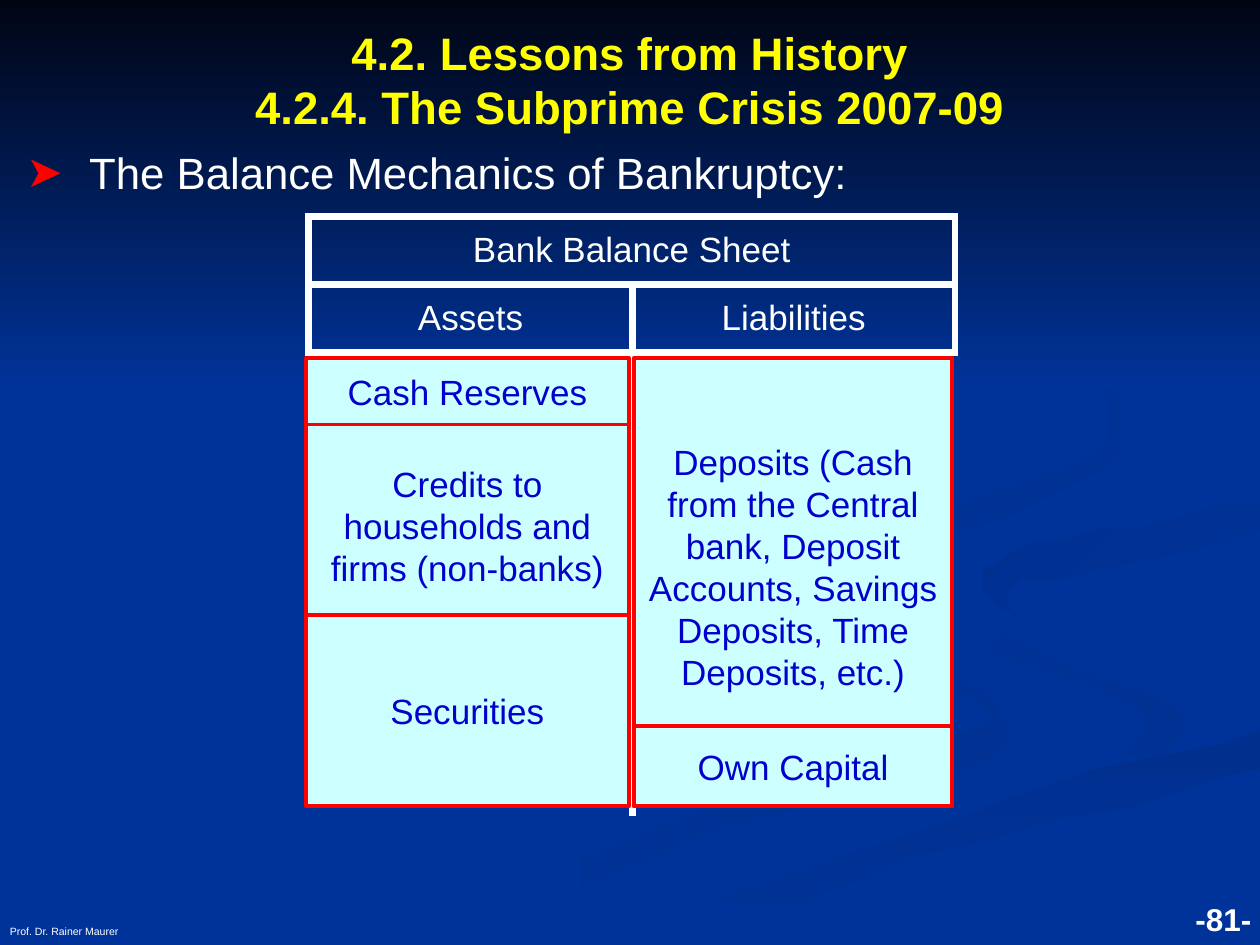
from dataclasses import dataclass

from lxml.etree import SubElement
from pptx import Presentation
from pptx.dml.color import RGBColor
from pptx.enum.shapes import MSO_SHAPE as Preset
from pptx.enum.text import MSO_ANCHOR as Anchor, PP_ALIGN as Align
from pptx.oxml.ns import qn
from pptx.util import Inches, Pt

WHITE = RGBColor(0xFF, 0xFF, 0xFF)
YELLOW = RGBColor(0xFF, 0xFF, 0x00)
RED = RGBColor(0xFF, 0x00, 0x00)
INK = RGBColor(0x00, 0x00, 0xCC)
PALE_CYAN = RGBColor(0xCC, 0xFF, 0xFF)
BLUE = RGBColor(0x00, 0x33, 0x99)
NIGHT = RGBColor(0x00, 0x05, 0x14)
SHADE = RGBColor(0x00, 0x2F, 0x8E)
SHADE_LIGHT = RGBColor(0x00, 0x31, 0x93)
FONT = "Arial"

# The slide is a grid of 100 columns by 75 rows
SLIDE_W, SLIDE_H = Inches(10), Inches(7.5)
UNIT = SLIDE_W // 100
CURVE_STEPS = 5


@dataclass
class Box:
    left: float
    top: float
    width: float
    height: float

    def emu(self) -> list[int]:
        return [round(v * UNIT) for v in (self.left, self.top, self.width, self.height)]


@dataclass
class Swirl:
    start: RGBColor
    end: RGBColor
    angle: int  # clockwise
    knots: list[tuple[float, float]]


@dataclass
class Label:
    text: str
    box: Box
    size: float
    color: RGBColor
    align: Align
    anchor: Anchor
    bold: bool = False


@dataclass
class Entry:
    text: str
    box: Box


# Background swirls, each a smooth closed curve through a few knots
SWIRLS = [
    Swirl(BLUE, SHADE_LIGHT, 0, [
        (57.5, 46), (63, 50.5), (76, 54.7), (77, 58.4), (54, 64.9), (30, 74.9),
        (36, 74.9), (56, 66.5), (77, 60.8), (78, 55.3), (61, 49.6)]),
    Swirl(BLUE, SHADE_LIGHT, 45, [
        (72.4, 46.4), (76.6, 51.2), (90, 55.7), (89.4, 60.5), (94.3, 57), (83, 51.9)]),
    Swirl(SHADE, BLUE, 90, [
        (50.3, 74.9), (57, 74.9), (72, 68.2), (99.8, 60.9), (99.8, 58.1), (76, 64.7)]),
    Swirl(SHADE, BLUE, 45, [
        (78, 46), (82.6, 49.6), (81, 46.5), (99.8, 42), (99.8, 40.2), (84, 42.8)]),
    Swirl(SHADE, BLUE, 45, [
        (68, 43), (82, 40.3), (89.4, 34.4), (85, 28), (76.2, 23.3), (86, 29),
        (87, 36.4), (73, 40.4), (59, 44), (62.2, 50), (60, 45.6)]),
]
SKY = Box(0, 0, 100, 30.8)

LABELS = [
    Label("4.2. Lessons from History\v4.2.4. The Subprime Crisis 2007-09",
          Box(0, 0.3, 100, 12), 26, YELLOW, Align.CENTER, Anchor.MIDDLE, True),
    Label("-81-", Box(77, 69.7, 23.3, 5.2), 18, WHITE, Align.RIGHT, Anchor.BOTTOM, True),
    Label("Prof. Dr. Rainer Maurer", Box(-0.2, 69.7, 61.8, 5.2), 6, WHITE,
          Align.LEFT, Anchor.BOTTOM),
]
TOPIC = Label("The Balance Mechanics of Bankruptcy:", Box(1.1, 10.7, 96.9, 6.6), 25, WHITE,
              Align.LEFT, Anchor.TOP)

# Balance sheet entries, back to front
ENTRIES = [
    Entry("Deposits (Cash from the Central bank, Deposit Accounts, Savings Deposits, "
          "Time Deposits, etc.)", Box(50.3, 28.4, 25.3, 33.1)),
    Entry("Credits to households and firms (non-banks)", Box(24.3, 33.5, 25.6, 16.4)),
    Entry("Securities", Box(24.3, 48.8, 25.6, 15.2)),
    Entry("Own Capital", Box(50.3, 57.6, 25.3, 6.4)),
    Entry("Cash Reserves", Box(24.3, 28.4, 25.6, 5.3)),
]
SHEET = Box(24.5, 17.2, 51.3, 47.6)
SHEET_COLS, SHEET_ROWS = (25.7, 25.6), (5.4, 5.4, 36.8)
HEADINGS = {(0, 0): "Bank Balance Sheet", (1, 0): "Assets", (1, 1): "Liabilities"}


def write(frame, text: str, size: float, color: RGBColor, align: Align, bold: bool = False):
    frame.word_wrap = True
    line = frame.paragraphs[0]
    line.text, line.alignment = text, align
    font = line.font
    font.name, font.size, font.bold, font.color.rgb = FONT, Pt(size), bold, color
    return line


def smooth(knots: list[tuple[float, float]]) -> list[tuple[float, float]]:
    """Closed Catmull-Rom curve, kept on the slide."""
    points = []
    for i, b in enumerate(knots):
        a, c, d = knots[i - 1], knots[(i + 1) % len(knots)], knots[(i + 2) % len(knots)]
        for step in range(CURVE_STEPS):
            t = step / CURVE_STEPS
            x, y = (q + t / 2 * (r - p + t * (2 * p - 5 * q + 4 * r - s
                                              + t * (3 * (q - r) + s - p)))
                    for p, q, r, s in zip(a, b, c, d))
            points.append((min(x, 100), min(y, 75)))
    return points


def shade(shape, start: RGBColor, end: RGBColor, angle: int) -> None:
    shape.shadow.inherit = False
    shape.line.fill.background()
    shape.fill.gradient()
    shape.fill.gradient_angle = (360 - angle) % 360
    for stop, color, place in zip(shape.fill.gradient_stops, (start, end), (0, 1)):
        stop.color.rgb, stop.position = color, place


def draw_swirl(shapes, swirl: Swirl) -> None:
    first, *rest = smooth(swirl.knots)
    builder = shapes.build_freeform(*first, scale=UNIT)
    builder.add_line_segments(rest, close=True)
    shade(builder.convert_to_shape(), swirl.start, swirl.end, swirl.angle)


def draw_label(shapes, label: Label):
    frame = shapes.add_textbox(*label.box.emu()).text_frame
    frame.vertical_anchor = label.anchor
    return write(frame, label.text, label.size, label.color, label.align, label.bold)


def draw_topic(shapes, topic: Label) -> None:
    line = draw_label(shapes, topic)
    line.line_spacing, line.space_before = 1.1, Pt(5)
    props = line._p.get_or_add_pPr()
    props.set("marL", str(5 * UNIT))
    props.set("indent", str(-5 * UNIT))
    # Bullet elements stand before the paragraph's default font
    bullet_color = props.makeelement(qn("a:buClr"), {})
    SubElement(bullet_color, qn("a:srgbClr"), val=str(RED))
    bullet_font = props.makeelement(qn("a:buFont"), {"typeface": FONT})
    bullet = props.makeelement(qn("a:buChar"), {"char": "➤"})
    font_props = props.find(qn("a:defRPr"))
    for part in (bullet_color, bullet_font, bullet):
        font_props.addprevious(part)


def draw_entry(shapes, entry: Entry) -> None:
    shape = shapes.add_shape(Preset.RECTANGLE, *entry.box.emu())
    shape.shadow.inherit = False
    shape.fill.solid()
    shape.fill.fore_color.rgb = PALE_CYAN
    shape.line.color.rgb, shape.line.width = RED, Pt(2.25)
    shape.text_frame.vertical_anchor = Anchor.MIDDLE
    write(shape.text_frame, entry.text, 20, INK, Align.CENTER)


def set_borders(cell, visible: str) -> None:
    props = cell._tc.get_or_add_tcPr()
    for place, side in enumerate("LRTB"):
        edge = SubElement(props, qn(f"a:ln{side}"), w=str(Pt(4.5)))
        props.insert(place, edge)
        if side in visible:
            SubElement(SubElement(edge, qn("a:solidFill")), qn("a:srgbClr"), val=str(WHITE))
        else:
            SubElement(edge, qn("a:noFill"))


def draw_sheet(shapes) -> None:
    table = shapes.add_table(len(SHEET_ROWS), len(SHEET_COLS), *SHEET.emu()).table
    table.first_row = table.horz_banding = False
    for column, width in zip(table.columns, SHEET_COLS):
        column.width = round(width * UNIT)
    for r, height in enumerate(SHEET_ROWS):
        table.rows[r].height = round(height * UNIT)
        for c in range(len(SHEET_COLS)):
            cell = table.cell(r, c)
            cell.fill.background()
            cell.vertical_anchor = Anchor.MIDDLE
            # The body row keeps only its top and middle rules
            set_borders(cell, "LRTB" if r < 2 else ("RT", "LT")[c])
            if (r, c) in HEADINGS:
                line = write(cell.text_frame, HEADINGS[r, c], 20, WHITE, Align.CENTER)
                line.space_before = Pt(4)
    table.cell(0, 0).merge(table.cell(0, 1))


def main() -> None:
    deck = Presentation()
    deck.slide_width, deck.slide_height = SLIDE_W, SLIDE_H
    slide = deck.slides.add_slide(deck.slide_layouts[6])
    slide.background.fill.solid()
    slide.background.fill.fore_color.rgb = BLUE
    shapes = slide.shapes
    for swirl in SWIRLS:
        draw_swirl(shapes, swirl)
    shade(shapes.add_shape(Preset.RECTANGLE, *SKY.emu()), NIGHT, BLUE, 90)
    draw_sheet(shapes)
    for label in LABELS:
        draw_label(shapes, label)
    draw_topic(shapes, TOPIC)
    for entry in ENTRIES:
        draw_entry(shapes, entry)
    deck.save("out.pptx")


if __name__ == "__main__":
    main()
